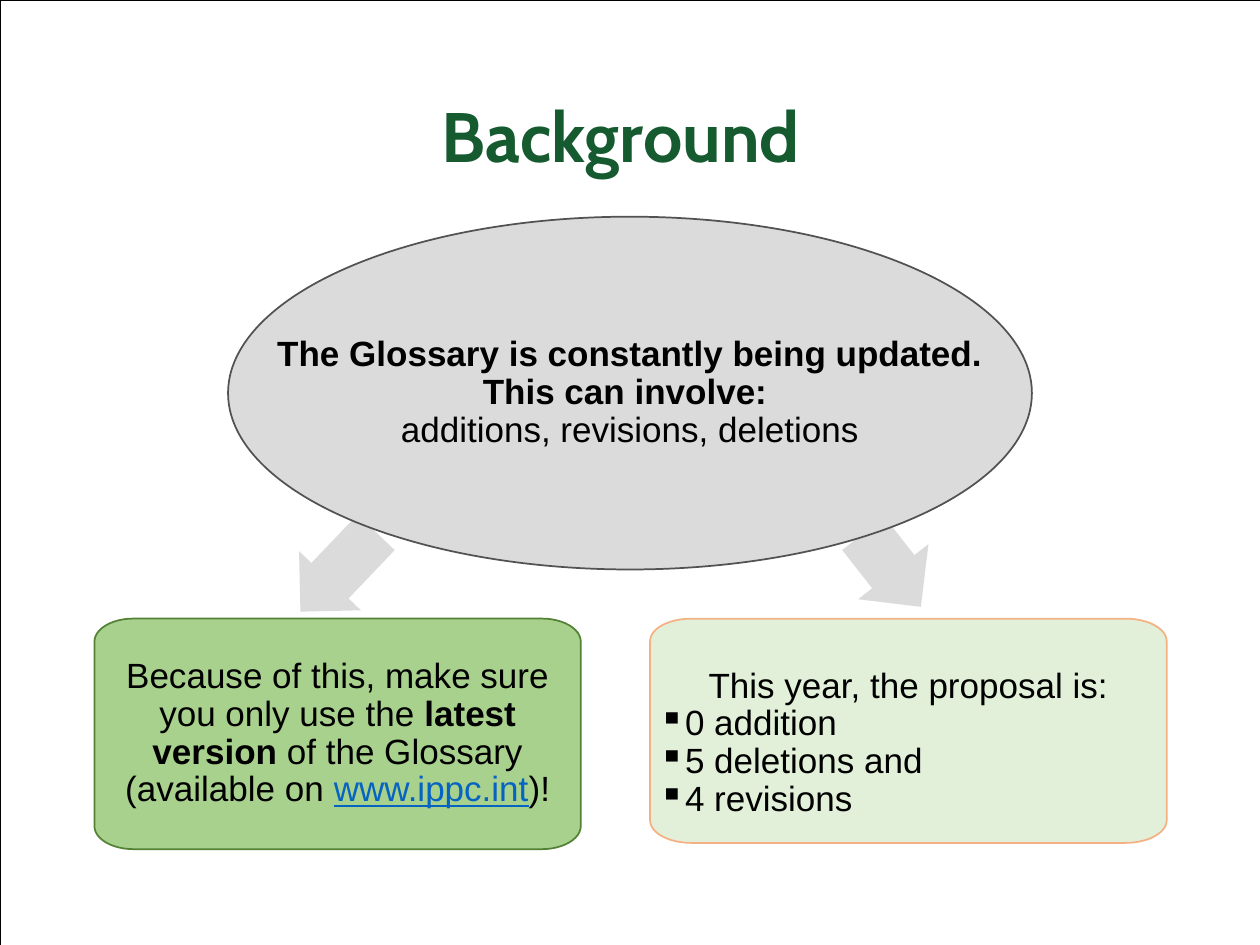
import math
from collections import namedtuple
from lxml import etree
from pptx import Presentation
from pptx import util as u
from pptx.dml.color import RGBColor
from pptx.enum import shapes, text
from pptx.oxml import ns

BLACK = RGBColor(0x00, 0x00, 0x00)
TITLE_GREEN = RGBColor(0x16, 0x5A, 0x30)
GREY = RGBColor(0xDB, 0xDB, 0xDB)
DARK_GREY = RGBColor(0x52, 0x52, 0x52)
GREEN = RGBColor(0xA9, 0xD1, 0x8E)
DARK_GREEN = RGBColor(0x54, 0x82, 0x35)
PALE_GREEN = RGBColor(0xE2, 0xF0, 0xD9)
ORANGE = RGBColor(0xF4, 0xB1, 0x83)
LINK_BLUE = RGBColor(0x05, 0x63, 0xC1)

UNIT = u.Inches(0.1)
COLUMNS, ROWS = 100, 75
CORNER_STEPS = 12

Box = namedtuple("Box", "left top width height")


def lengths(box):
    return [u.Emu(round(value * UNIT)) for value in box]


def paint(shape, fill=None, line=None, width=1):
    shape.shadow.inherit = False
    if fill is None:
        shape.fill.background()
    else:
        shape.fill.solid()
        shape.fill.fore_color.rgb = fill
    if line is None:
        shape.line.fill.background()
    else:
        shape.line.color.rgb = line
        shape.line.width = u.Pt(width)


def prepare_text(shape, margin, wrap=True):
    frame = shape.text_frame
    frame.word_wrap = wrap
    frame.vertical_anchor = text.MSO_ANCHOR.MIDDLE
    frame.margin_left = frame.margin_right = u.Inches(margin)
    frame.margin_top = frame.margin_bottom = u.Inches(margin)
    return frame


def add_run(paragraph, words, size=20, name="Arial", color=BLACK, bold=False, underline=False):
    run = paragraph.add_run()
    run.text = words
    font = run.font
    font.size, font.name = u.Pt(size), name
    font.bold, font.underline = bold, underline
    font.color.rgb = color


def format_paragraph(paragraph, alignment=text.PP_ALIGN.CENTER, spacing=0.9):
    paragraph.alignment = alignment
    paragraph.line_spacing = spacing
    paragraph.space_before = paragraph.space_after = u.Pt(0)


def add_bullet(paragraph):
    properties = paragraph._p.get_or_add_pPr()
    properties.set("marL", "0")
    properties.set("indent", "0")
    etree.SubElement(properties, ns.qn("a:buChar")).set("char", "▪")


def add_frame(slide, box):
    frame = slide.shapes.add_shape(shapes.MSO_SHAPE.RECTANGLE, *lengths(box))
    paint(frame, line=BLACK, width=0.25)


def add_title(slide, box):
    title = slide.shapes.title
    title.left, title.top, title.width, title.height = lengths(box)
    title.text_frame.vertical_anchor = text.MSO_ANCHOR.MIDDLE
    paragraph = title.text_frame.paragraphs[0]
    paragraph.alignment = text.PP_ALIGN.CENTER
    add_run(paragraph, "Background ", 40, "Cabin", TITLE_GREEN, bold=True)


def add_arrow(slide, box, rotation):
    arrow = slide.shapes.add_shape(shapes.MSO_SHAPE.LEFT_ARROW, *lengths(box))
    arrow.adjustments[0], arrow.adjustments[1] = 0.6, 0.5
    arrow.rotation = rotation
    paint(arrow, GREY)


def add_card(slide, box, fill, line):
    left, top, width, height = lengths(box)
    radius_x, radius_y = 0.08 * width, 0.1 * height
    corners = [
        (left + width - radius_x, top + height - radius_y),
        (left + radius_x, top + height - radius_y),
        (left + radius_x, top + radius_y),
        (left + width - radius_x, top + radius_y),
    ]
    points = []
    for quarter, (x, y) in enumerate(corners):
        for step in range(CORNER_STEPS + 1):
            angle = (quarter + step / CORNER_STEPS) * math.pi / 2
            points.append((round(x + radius_x * math.cos(angle)),
                           round(y + radius_y * math.sin(angle))))
    builder = slide.shapes.build_freeform(*points[0])
    builder.add_line_segments(points[1:], close=True)
    card = builder.convert_to_shape()
    paint(card, fill, line)
    return prepare_text(card, 0.07)


def add_advice(slide, box):
    paragraph = add_card(slide, box, GREEN, DARK_GREEN).paragraphs[0]
    format_paragraph(paragraph)
    add_run(paragraph, "Because of this, make sure you only use the ")
    add_run(paragraph, "latest version", bold=True)
    add_run(paragraph, " of the Glossary (available on ")
    add_run(paragraph, "www.ippc.int", color=LINK_BLUE, underline=True)
    add_run(paragraph, ")!")


def add_proposal(slide, box):
    frame = add_card(slide, box, PALE_GREEN, ORANGE)
    heading = frame.paragraphs[0]
    format_paragraph(heading, spacing=1.5)
    add_run(heading, "This year, the proposal is:")
    for words in ("0 addition", "5 deletions and", "4 revisions"):
        paragraph = frame.add_paragraph()
        format_paragraph(paragraph, text.PP_ALIGN.LEFT)
        add_bullet(paragraph)
        add_run(paragraph, words)


def add_statement(slide, box):
    oval = slide.shapes.add_shape(shapes.MSO_SHAPE.OVAL, *lengths(box))
    paint(oval, GREY, DARK_GREY)
    frame = prepare_text(oval, 0, wrap=False)
    paragraph = frame.paragraphs[0]
    format_paragraph(paragraph)
    add_run(paragraph, "The Glossary is constantly being updated.", bold=True)
    paragraph.add_line_break()
    add_run(paragraph, "This can involve: ", bold=True)
    kinds = frame.add_paragraph()
    format_paragraph(kinds)
    add_run(kinds, "additions, revisions, deletions")


def main():
    presentation = Presentation()
    presentation.slide_width = COLUMNS * UNIT
    presentation.slide_height = ROWS * UNIT
    slide = presentation.slides.add_slide(presentation.slide_layouts[5])
    add_frame(slide, Box(0, 0, COLUMNS, ROWS))
    add_title(slide, Box(7, 6.8, 85.8, 7.7))
    add_arrow(slide, Box(67.1, 41.7, 7.4, 7.1), 231.9)
    add_advice(slide, Box(7.5, 49.1, 38.6, 18.3))
    add_arrow(slide, Box(22.5, 42, 8.7, 6.8), 313.7)
    add_proposal(slide, Box(51.6, 49.1, 41, 17.8))
    add_statement(slide, Box(18.1, 17.2, 63.8, 28))
    presentation.save("out.pptx")


if __name__ == "__main__":
    main()
